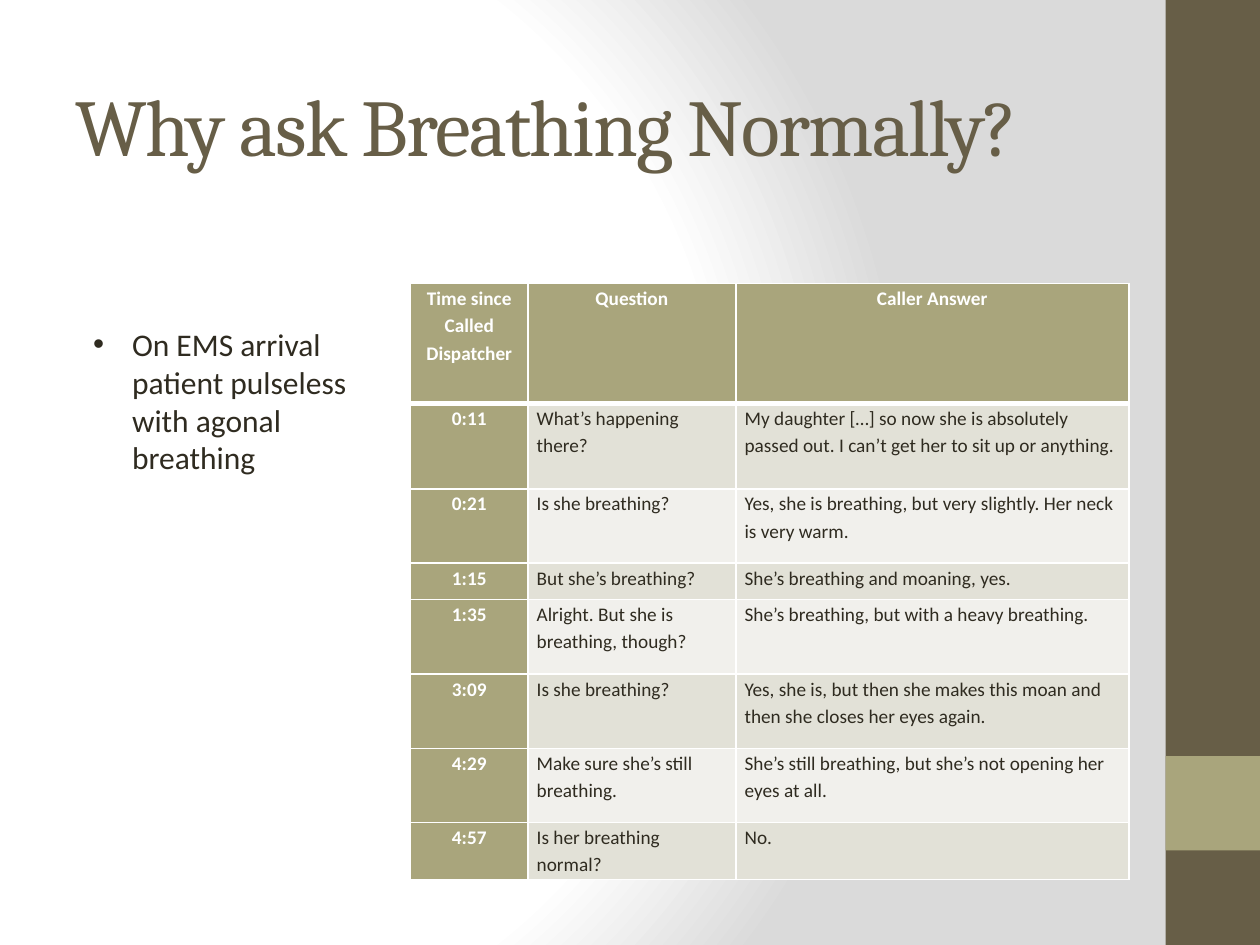
import pptx
import pptx.util
import pptx.oxml
import pptx.oxml.ns
import pptx.dml.color
import pptx.enum.text
import pptx.enum.shapes

Inches, Pt = pptx.util.Inches, pptx.util.Pt
ALIGN = pptx.enum.text.PP_ALIGN
ANCHOR = pptx.enum.text.MSO_ANCHOR
NS = pptx.oxml.ns.nsdecls("a")

BROWN, SAGE, INK, WHITE = "675E47", "A9A57C", "2F2B20", "FFFFFF"
BANDS = ["E2E1D7", "F1F0EC"]

TITLE = "Why ask Breathing Normally?"
POINT = "On EMS arrival patient pulseless with agonal breathing"
CALLS = [
    ("Time since Called Dispatcher", "Question", "Caller Answer"),
    ("0:11", "What’s happening there?",
     "My daughter […] so now she is absolutely passed out. "
     "I can’t get her to sit up or anything."),
    ("0:21", "Is she breathing?",
     "Yes, she is breathing, but very slightly. Her neck is very warm."),
    ("1:15", "But she’s breathing?", "She’s breathing and moaning, yes."),
    ("1:35", "Alright. But she is breathing, though?",
     "She’s breathing, but with a heavy breathing."),
    ("3:09", "Is she breathing?",
     "Yes, she is, but then she makes this moan and then she closes her eyes again."),
    ("4:29", "Make sure she’s still breathing.",
     "She’s still breathing, but she’s not opening her eyes at all."),
    ("4:57", "Is her breathing normal?", "No."),
]
WIDTHS = [0.93, 1.65, 3.12]
HEIGHTS = [0.95, 0.68, 0.59, 0.29, 0.59, 0.59, 0.59, 0.45]
BARS = [(0, 7.5, BROWN), (6, 0.75, SAGE)]


def rgb(code):
    return pptx.dml.color.RGBColor.from_string(code)


def box(*sizes):
    return [Inches(size) for size in sizes]


def style(para, font, size, color, bold=False):
    for run in para.runs:
        run.font.name = font
        run.font.size = Pt(size)
        run.font.bold = bold
        run.font.color.rgb = rgb(color)


def shade(slide):
    """Give the slide a white to grey radial background."""
    slide.background.fill.solid()
    flat = slide.element.find(".//" + pptx.oxml.ns.qn("a:solidFill"))
    stops = "".join(
        f'<a:gs pos="{pos * 1000}"><a:srgbClr val="{code}"/></a:gs>'
        for pos, code in [(0, WHITE), (75, WHITE), (100, "DADADA")])
    flat.getparent().replace(flat, pptx.oxml.parse_xml(
        f'<a:gradFill {NS} rotWithShape="1"><a:gsLst>{stops}</a:gsLst>'
        '<a:path path="circle"><a:fillToRect l="20000" t="50000" '
        'r="100000" b="50000"/></a:path></a:gradFill>'))


def edge(cell, row):
    """Draw white cell borders, thick below the header."""
    points = {"L": 1, "R": 1, "T": 3 if row == 1 else 1, "B": 3 if row == 0 else 1}
    props = cell._tc.get_or_add_tcPr()
    for spot, (side, width) in enumerate(points.items()):
        props.insert(spot, pptx.oxml.parse_xml(
            f'<a:ln{side} {NS} w="{Pt(width)}"><a:solidFill>'
            f'<a:srgbClr val="{WHITE}"/></a:solidFill></a:ln{side}>'))


def add_title(slide):
    title = slide.shapes.title
    title.left, title.top, title.width, title.height = box(0.5, 0.36, 8.33, 1.25)
    frame = title.text_frame
    frame.text = TITLE
    frame.vertical_anchor = ANCHOR.MIDDLE
    para = frame.paragraphs[0]
    para.alignment = ALIGN.LEFT
    style(para, "Cambria", 46, BROWN)
    para.runs[0].font._element.set("spc", "-100")


def add_bars(slide):
    for top, height, color in BARS:
        bar = slide.shapes.add_shape(
            pptx.enum.shapes.MSO_SHAPE.RECTANGLE, *box(9.25, top, 0.75, height))
        bar.shadow.inherit = False
        bar.fill.solid()
        bar.fill.fore_color.rgb = rgb(color)
        bar.line.fill.background()


def add_calls(slide):
    table = slide.shapes.add_table(
        len(CALLS), len(WIDTHS),
        *box(3.26, 2.25, sum(WIDTHS), sum(HEIGHTS))).table
    for col, width in zip(table.columns, WIDTHS):
        col.width = Inches(width)
    for row, height in zip(table.rows, HEIGHTS):
        row.height = Inches(height)
    for r, texts in enumerate(CALLS):
        for c, text in enumerate(texts):
            head = r == 0 or c == 0
            cell = table.cell(r, c)
            cell.text_frame.text = text
            cell.margin_left = cell.margin_right = Inches(0.07)
            cell.margin_top = cell.margin_bottom = 0
            cell.fill.solid()
            cell.fill.fore_color.rgb = rgb(SAGE if head else BANDS[(r - 1) % 2])
            edge(cell, r)
            para = cell.text_frame.paragraphs[0]
            para.alignment = ALIGN.CENTER if head else ALIGN.LEFT
            para.line_spacing = 1.15
            style(para, "Calibri", 11, WHITE if head else INK, head)


def add_point(slide):
    frame = slide.shapes.add_textbox(*box(0.64, 2.53, 2.4, 1.92)).text_frame
    frame.word_wrap = True
    frame.auto_size = pptx.enum.text.MSO_AUTO_SIZE.SHAPE_TO_FIT_TEXT
    frame.text = POINT
    para = frame.paragraphs[0]
    style(para, "Calibri", 18, INK)
    props = para._p.get_or_add_pPr()
    props.set("marL", str(Inches(0.31)))
    props.set("indent", str(-Inches(0.31)))
    props.append(pptx.oxml.parse_xml(f'<a:buFont {NS} typeface="Arial"/>'))
    props.append(pptx.oxml.parse_xml(f'<a:buChar {NS} char="•"/>'))


def main():
    deck = pptx.Presentation()
    deck.slide_width, deck.slide_height = box(10, 7.5)
    slide = deck.slides.add_slide(deck.slide_layouts[5])
    shade(slide)
    add_bars(slide)
    add_title(slide)
    add_calls(slide)
    add_point(slide)
    deck.save("out.pptx")


if __name__ == "__main__":
    main()
